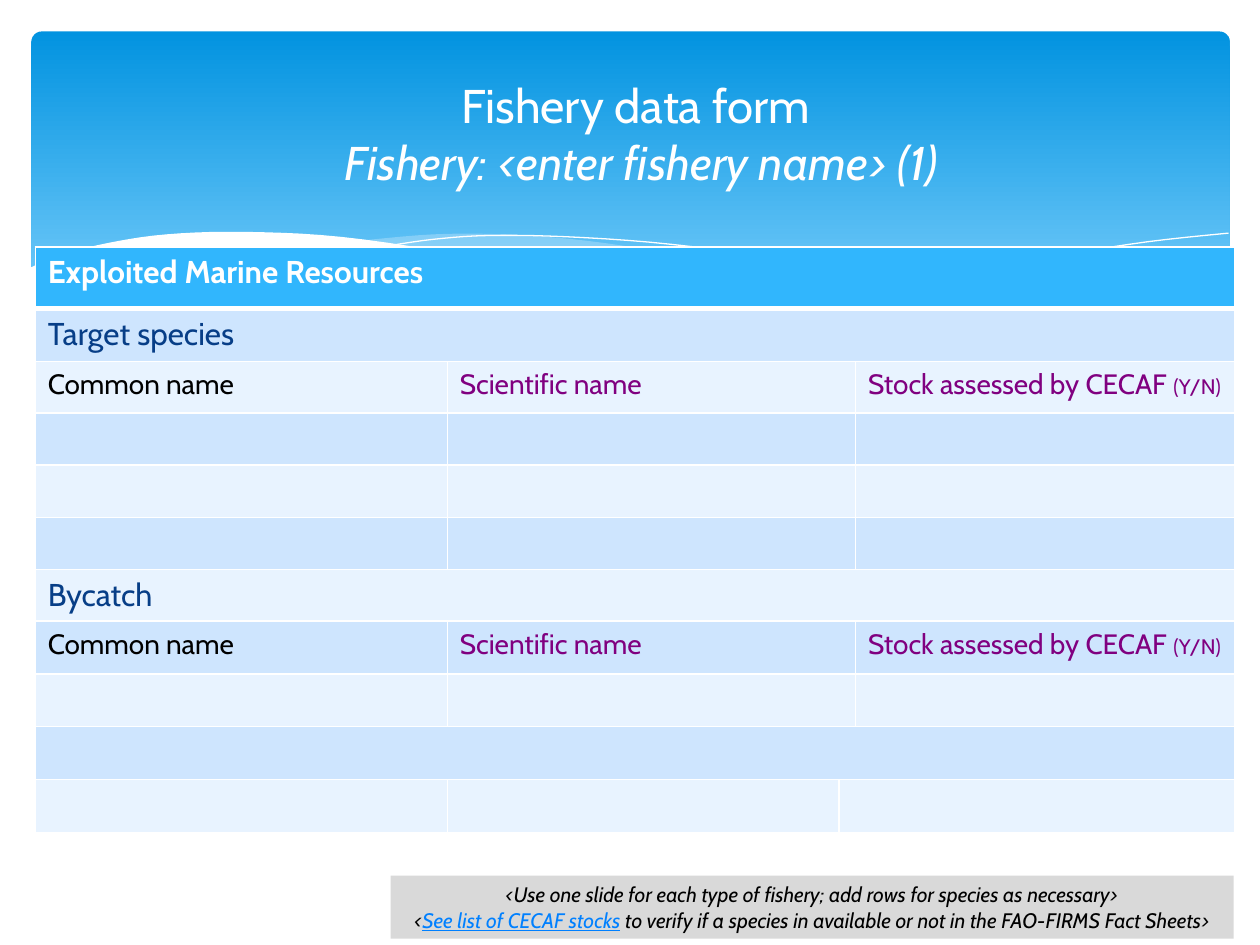
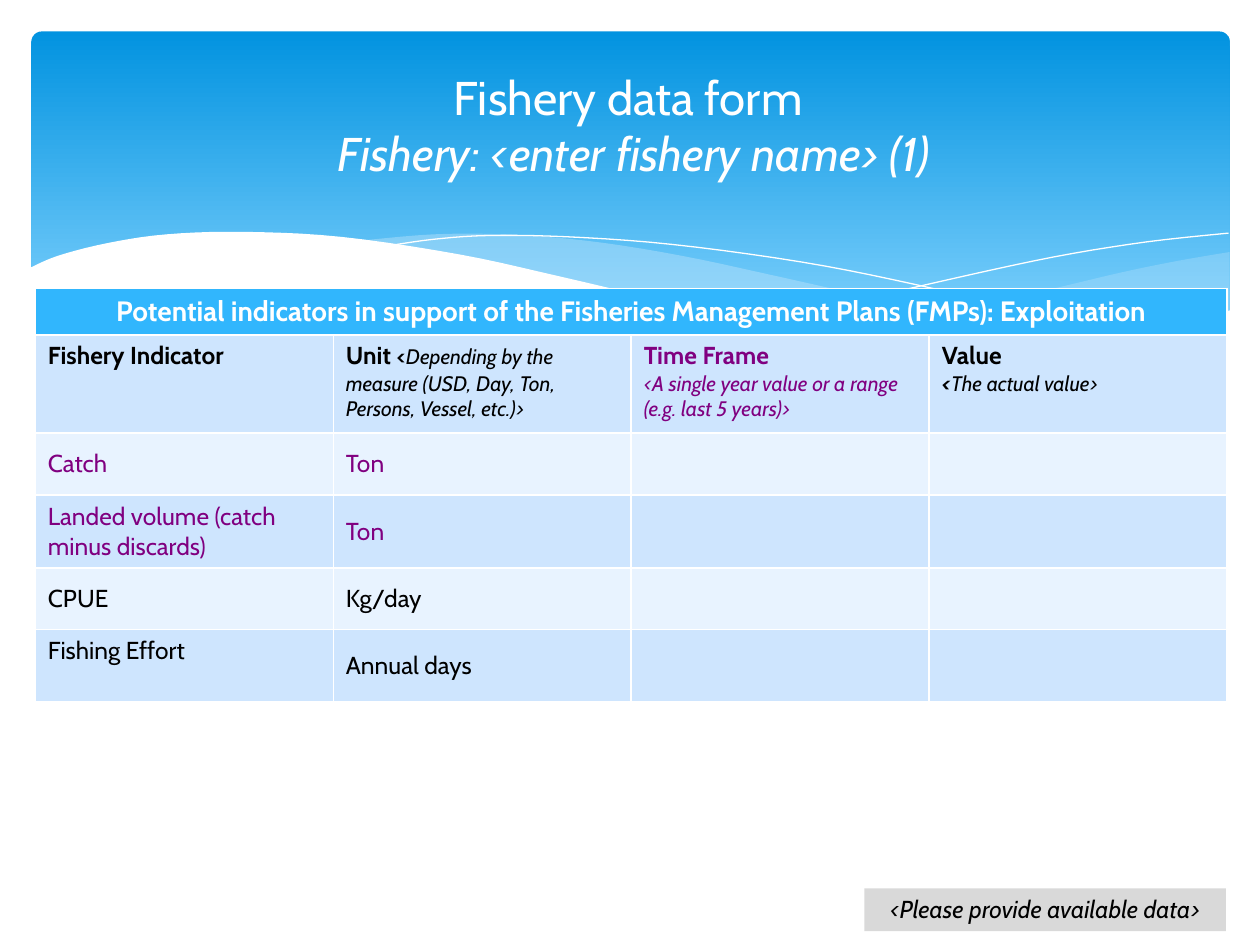
"""Build the two fishery data form slides: a wave header, a table and a note on each."""
from lxml.etree import SubElement
from pptx import Presentation
from pptx.dml.color import RGBColor
from pptx.enum.shapes import MSO_SHAPE
from pptx.enum.text import MSO_ANCHOR, PP_ALIGN
from pptx.oxml.ns import qn
from pptx.util import Inches, Pt

SLIDE_SIZE = (10, 7.5)
THEME = {
    "font": "Cabin",
    "white": "FFFFFF",
    "band": ("0293E0", "83D3FE"),
    "wave": "C6E7FC",
    "header": "31B6FD",
    "stripes": ("CEE5FE", "E8F3FF"),
    "note": "D9D9D9",
    "styles": {
        "title": {"size": 27, "color": "FFFFFF"},
        "title name": {"size": 27, "color": "FFFFFF", "italic": True},
        "large header": {"size": 18, "color": "FFFFFF", "bold": True},
        "header": {"size": 16, "color": "FFFFFF", "bold": True},
        "section": {"size": 18, "color": "073E87"},
        "column": {"size": 16, "color": "000000"},
        "key column": {"size": 16, "color": "800080"},
        "key hint": {"size": 12, "color": "800080"},
        "label": {"size": 14, "color": "000000", "bold": True},
        "key label": {"size": 14, "color": "800080", "bold": True},
        "bracket": {"size": 12, "color": "000000", "bold": True},
        "slanted bracket": {"size": 12, "color": "000000", "bold": True, "italic": True},
        "hint": {"size": 12, "color": "000000", "italic": True},
        "slanted key hint": {"size": 12, "color": "800080", "italic": True},
        "link": {"size": 12, "color": "0080FF", "italic": True, "underline": True},
        "body": {"size": 14, "color": "000000"},
        "key body": {"size": 14, "color": "800080"},
        "large hint": {"size": 14, "color": "000000", "italic": True},
    },
}

BAND = (0.25, 0.25, 9.51, 2.7)
TITLE = [[("title", "Fishery data form"), ("title name", "\v Fishery: <enter fishery name> (1)")]]

WAVES = [
    {"fill": THEME["wave"], "opacity": 29,
     "curves": [[(9.76, 2), (9.35, 2.07), (8.91, 2.16), (8.32, 2.3), (7.53, 2.48), (6.61, 2.65)],
                [(6.61, 2.65), (7.19, 2.72), (7.69, 2.77), (8.24, 2.77), (8.72, 2.74),
                 (9.21, 2.65), (9.76, 2.47)]]},
    {"fill": THEME["wave"], "opacity": 40,
     "curves": [[(8.93, 2.73), (8.37, 2.65), (7.41, 2.47), (6.29, 2.22), (5.41, 2.03),
                 (4.65, 1.91), (3.99, 1.86), (3.44, 1.86), (2.86, 1.91)],
                [(2.86, 1.91), (3.62, 2.03), (4.49, 2.22), (5.3, 2.4), (6.01, 2.55),
                 (6.8, 2.68), (7.48, 2.76), (8.07, 2.78), (8.48, 2.77), (8.93, 2.73)]]},
    {"line": THEME["white"],
     "curves": [[(3.09, 1.95), (3.44, 1.9), (3.87, 1.87), (4.5, 1.88), (5.33, 1.94),
                 (6.36, 2.08), (7.27, 2.26), (8.31, 2.51), (9.07, 2.72)]]},
    {"line": THEME["white"],
     "curves": [[(6.13, 2.57), (6.72, 2.41), (7.48, 2.23), (8.36, 2.04), (9.1, 1.92), (9.75, 1.85)]]},
    {"fill": THEME["white"], "opacity": 100,
     "curves": [[(9.77, 2.46), (9.4, 2.59), (8.99, 2.69), (8.23, 2.77), (7.44, 2.74),
                 (6.48, 2.62), (5.55, 2.45), (4.47, 2.2), (3.65, 2.02), (2.71, 1.88),
                 (1.93, 1.84), (1.32, 1.86), (0.85, 1.93), (0.46, 2.03), (0.23, 2.13)],
                [(0.23, 3.29), (9.77, 3.29)]]},
]

SPECIES_COLUMNS = [
    (1, [[("column", "Common name")]]),
    (2, [[("key column", "Scientific name")]]),
    (1, [[("key column", "Stock assessed by CECAF "), ("key hint", "(Y/N)")]]),
]
BLANK_SPECIES = [(1, []), (2, []), (1, [])]
BLANK_VALUES = [(1, []), (1, [])]


def indicator_row(style, name, unit):
    return [(1, [[(style, name)]]), (1, [[(style, unit)]])] + BLANK_VALUES


PAGES = [
    {
        "title": (0.28, 0.37, 9.53, 1.37),
        "note": (3.1, 6.95, 6.69, 0.5),
        "note text": [
            [("hint", "<Use one slide for each type of fishery; add rows for species as necessary>")],
            [("hint", "<"), ("link", "See list of CECAF stocks"),
             ("hint", " to verify if a species in available or not in the FAO-FIRMS Fact Sheets>")],
        ],
        "table": {
            "corner": (0.28, 1.96),
            "columns": [3.27, 3.11, 0.13, 3.01],
            "heights": [0.49, 0.42] + [0.41, 0.41, 0.42] * 2 + [0.42] * 3,
            "header align": PP_ALIGN.LEFT,
            "header rule": 3,
            "right margin": 0.05,
            "centred rows": (),
            "rows": [
                [(4, [[("large header", "Exploited Marine Resources")]])],
                [(4, [[("section", "Target species")]])],
                SPECIES_COLUMNS,
                *[BLANK_SPECIES] * 3,
                [(4, [[("section", "Bycatch")]])],
                SPECIES_COLUMNS,
                BLANK_SPECIES,
                [(4, [])],
                [(1, []), (1, []), (2, [])],
            ],
        },
    },
    {
        "title": (0.22, 0.49, 9.53, 1),
        "note": (6.86, 7.05, 2.87, 0.34),
        "note text": [[("large hint", "<Please provide available data>")]],
        "table": {
            "corner": (0.28, 2.29),
            "columns": [9.46 / 4] * 4,
            "heights": [0.36, 0.78, 0.49, 0.58, 0.49, 0.57],
            "header align": PP_ALIGN.CENTER,
            "header rule": 1,
            "right margin": 0.1,
            "centred rows": (2, 3, 4, 5),
            "top cell": "Fishing Effort",
            "rows": [
                [(4, [[("header", "Potential indicators in support of the Fisheries "
                                  "Management Plans (FMPs): Exploitation")]])],
                [(1, [[("label", "Fishery Indicator")]]),
                 (1, [[("label", "Unit "), ("bracket", "<"),
                       ("hint", "Depending by the measure (USD, Day, Ton, Persons, Vessel, etc.)>")]]),
                 (1, [[("key label", "Time Frame")],
                      [("slanted key hint", "<A single year value or a range (e.g. last 5 years)>")]]),
                 (1, [[("label", "Value")],
                      [("slanted bracket", "<"), ("hint", "The actual value>")]])],
                indicator_row("key body", "Catch", "Ton"),
                indicator_row("key body", "Landed volume (catch minus discards)", "Ton"),
                indicator_row("body", "CPUE", "Kg/day"),
                indicator_row("body", "Fishing Effort", "Annual days"),
            ],
        },
    },
]


def rgb(code):
    return RGBColor.from_string(code)


def inches(lengths):
    return [Inches(length) for length in lengths]


def paint(fill, code):
    fill.solid()
    fill.fore_color.rgb = rgb(code)


def write(frame, paragraphs, align):
    frame.word_wrap = True
    for index, spans in enumerate(paragraphs):
        para = frame.paragraphs[0] if index == 0 else frame.add_paragraph()
        para.alignment = align
        for style, text in spans:
            if text.startswith("\v"):
                para.add_line_break()
            span = para.add_run()
            span.text = text.lstrip("\v")
            values = dict(THEME["styles"][style], name=THEME["font"])
            span.font.color.rgb = rgb(values.pop("color"))
            values["size"] = Pt(values["size"])
            for key, value in values.items():
                setattr(span.font, key, value)


def smooth_curve(knots, steps=5):
    """Return Catmull-Rom points through the knots; two knots stay a straight line."""
    if len(knots) < 3:
        return knots
    padded = [knots[0], *knots, knots[-1]]
    points = [knots[0]]
    for a, b, c, d in zip(padded, padded[1:], padded[2:], padded[3:]):
        for step in range(1, steps + 1):
            t = step / steps
            points.append(tuple(
                (2 * q + (r - p) * t + (2 * p - 5 * q + 4 * r - s) * t ** 2
                 + (3 * q - p - 3 * r + s) * t ** 3) / 2
                for p, q, r, s in zip(a, b, c, d)))
    return points


def add_band(page):
    band = page.shapes.add_shape(MSO_SHAPE.ROUNDED_RECTANGLE, *inches(BAND))
    band.adjustments[0] = 0.03
    band.shadow.inherit = False
    band.line.fill.background()
    band.fill.gradient()
    band.fill.gradient_angle = 270
    for stop, code, position in zip(band.fill.gradient_stops, THEME["band"], (0, 0.9)):
        stop.color.rgb = rgb(code)
        stop.position = position


def add_wave(page, wave):
    points = [inches(point) for curve in wave["curves"] for point in smooth_curve(curve)]
    builder = page.shapes.build_freeform(*points[0])
    builder.add_line_segments(points[1:], close="fill" in wave)
    shape = builder.convert_to_shape()
    shape.shadow.inherit = False
    if "line" in wave:
        shape.fill.background()
        shape.line.color.rgb = rgb(wave["line"])
        shape.line.width = Pt(0)
        return
    shape.line.fill.background()
    paint(shape.fill, wave["fill"])
    color = shape.fill._xPr.find(qn("a:solidFill"))[0]
    SubElement(color, qn("a:alpha"), val=str(wave["opacity"] * 1000))


def add_borders(cell, bottom, top):
    properties = cell._tc.get_or_add_tcPr()
    for side, width in (("L", 1), ("R", 1), ("T", top), ("B", bottom)):
        line = SubElement(properties, qn(f"a:ln{side}"), w=str(Pt(width)))
        SubElement(SubElement(line, qn("a:solidFill")), qn("a:srgbClr"), val=THEME["white"])


def add_table(page, spec):
    columns, heights = spec["columns"], spec["heights"]
    frame = page.shapes.add_table(len(heights), len(columns), *inches(spec["corner"]),
                                  *inches((sum(columns), sum(heights))))
    table = frame.table
    table.first_row = table.horz_banding = False
    for column, width in zip(table.columns, columns):
        column.width = Inches(width)
    for number, (row, height, entries) in enumerate(zip(table.rows, heights, spec["rows"])):
        row.height = Inches(height)
        for cell in row.cells:
            add_borders(cell, spec["header rule"] if number == 0 else 1,
                        spec["header rule"] if number == 1 else 1)
            paint(cell.fill, THEME["stripes"][(number - 1) % 2] if number else THEME["header"])
        start = 0
        for width, paragraphs in entries:
            cell = table.cell(number, start)
            if width > 1:
                cell.merge(table.cell(number, start + width - 1))
            cell.margin_right = Inches(spec["right margin"])
            write(cell.text_frame, paragraphs, PP_ALIGN.LEFT if number else spec["header align"])
            centred = number in spec["centred rows"] and cell.text_frame.text != spec["top cell"]
            cell.vertical_anchor = MSO_ANCHOR.MIDDLE if centred else MSO_ANCHOR.TOP
            start += width


def add_note(page, place, paragraphs):
    note = page.shapes.add_shape(MSO_SHAPE.RECTANGLE, *inches(place))
    note.shadow.inherit = False
    note.line.fill.background()
    paint(note.fill, THEME["note"])
    note.text_frame.vertical_anchor = MSO_ANCHOR.TOP
    write(note.text_frame, paragraphs, PP_ALIGN.CENTER)


def add_title(page, place):
    box = page.shapes.add_textbox(*inches(place))
    box.text_frame.vertical_anchor = MSO_ANCHOR.MIDDLE
    write(box.text_frame, TITLE, PP_ALIGN.CENTER)


def main():
    deck = Presentation()
    deck.slide_width, deck.slide_height = inches(SLIDE_SIZE)
    for content in PAGES:
        page = deck.slides.add_slide(deck.slide_layouts[6])
        add_band(page)
        for wave in WAVES:
            add_wave(page, wave)
        add_table(page, content["table"])
        add_note(page, content["note"], content["note text"])
        add_title(page, content["title"])
    deck.save("out.pptx")


if __name__ == "__main__":
    main()
